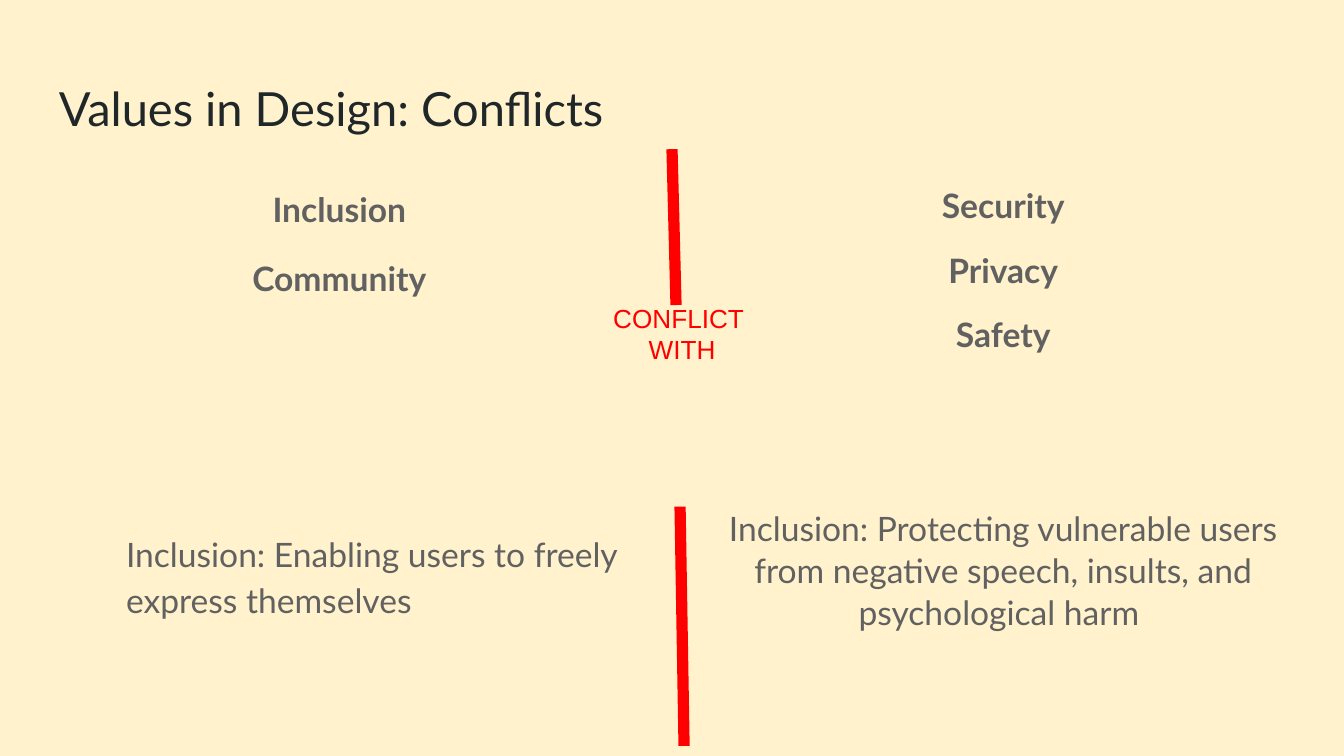
from pptx import Presentation
from pptx.dml.color import RGBColor
from pptx.enum.shapes import MSO_CONNECTOR
from pptx.enum.text import PP_ALIGN
from pptx.oxml.ns import qn
from pptx.util import Inches, Pt
from lxml import etree

LEFT, CENTER = PP_ALIGN.LEFT, PP_ALIGN.CENTER
STRAIGHT = MSO_CONNECTOR.STRAIGHT
COLORS = {"background": "FFF2CC", "title": "202729", "body": "616161", "conflict": "FF0000"}

# 16:9 slide
prs = Presentation()
prs.slide_width = Inches(10)
prs.slide_height = Inches(10 * 9 / 16)
s = prs.slides.add_slide(prs.slide_layouts[6])
s.background.fill.solid()
s.background.fill.fore_color.rgb = RGBColor.from_string(COLORS["background"])


def add_box(x, y, w, h, inset):
    tf = s.shapes.add_textbox(Inches(x), Inches(y), Inches(w), Inches(h)).text_frame
    tf.word_wrap = True
    tf.margin_left = tf.margin_right = Inches(0.1)
    tf.margin_top = tf.margin_bottom = Inches(inset)
    return tf


def style(p, text, size, color, font="Lato", bold=False, align=LEFT):
    p.text = text
    p.alignment = align
    p.font.name = font
    p.font.size = Pt(size)
    p.font.bold = bold
    p.font.color.rgb = RGBColor.from_string(COLORS[color])


# Title
tf = add_box(0.34, 0.49, 9.32, 0.63, 0.1)
style(tf.paragraphs[0], "Values in Design: Conflicts", 25.2, "title")

# Value columns: names on top, an explanation set apart below
columns = [
    (0.34, 1.15, ["Inclusion", "Community"], 123, LEFT,
     "Inclusion: Enabling users to freely express themselves"),
    (5.28, 1.05, ["Security", "Privacy", "Safety"], 81, CENTER,
     "Inclusion: Protecting vulnerable users from negative speech, insults, "
     "and psychological harm "),
]
for x, spacing, values, gap, align, explanation in columns:
    tf = add_box(x, 1.26, 4.37, 3.74, 0.1)
    for i, value in enumerate(values):
        p = tf.paragraphs[0] if i == 0 else tf.add_paragraph()
        style(p, value, 18, "body", bold=True, align=CENTER)
        p.line_spacing = spacing
        p.space_before = Pt(12 if i else 0)
    p = tf.add_paragraph()
    style(p, explanation, 18, "body", align=align)
    p.line_spacing = spacing
    p.space_before = Pt(gap)
    if align == LEFT:
        pPr = p._p.get_or_add_pPr()
        pPr.set("marL", str(Inches(0.5)))
        pPr.set("indent", "0")

# Conflict label
tf = add_box(4.04, 2.2, 2.07, 1.45, 0.05)
style(tf.paragraphs[0], "CONFLICT \vWITH", 14, "conflict", font="Arial", align=CENTER)

# Divider above and below the label
for x1, y1, x2, y2 in [(5, 1.11, 5.03, 2.27), (5.06, 3.77, 5.09, 5.55)]:
    line = s.shapes.add_connector(STRAIGHT, Inches(x1), Inches(y1), Inches(x2), Inches(y2))
    line.line.color.rgb = RGBColor.from_string(COLORS["conflict"])
    line.line.width = Pt(6)
    etree.SubElement(line._element.spPr, qn("a:effectLst"))

prs.save("out.pptx")
